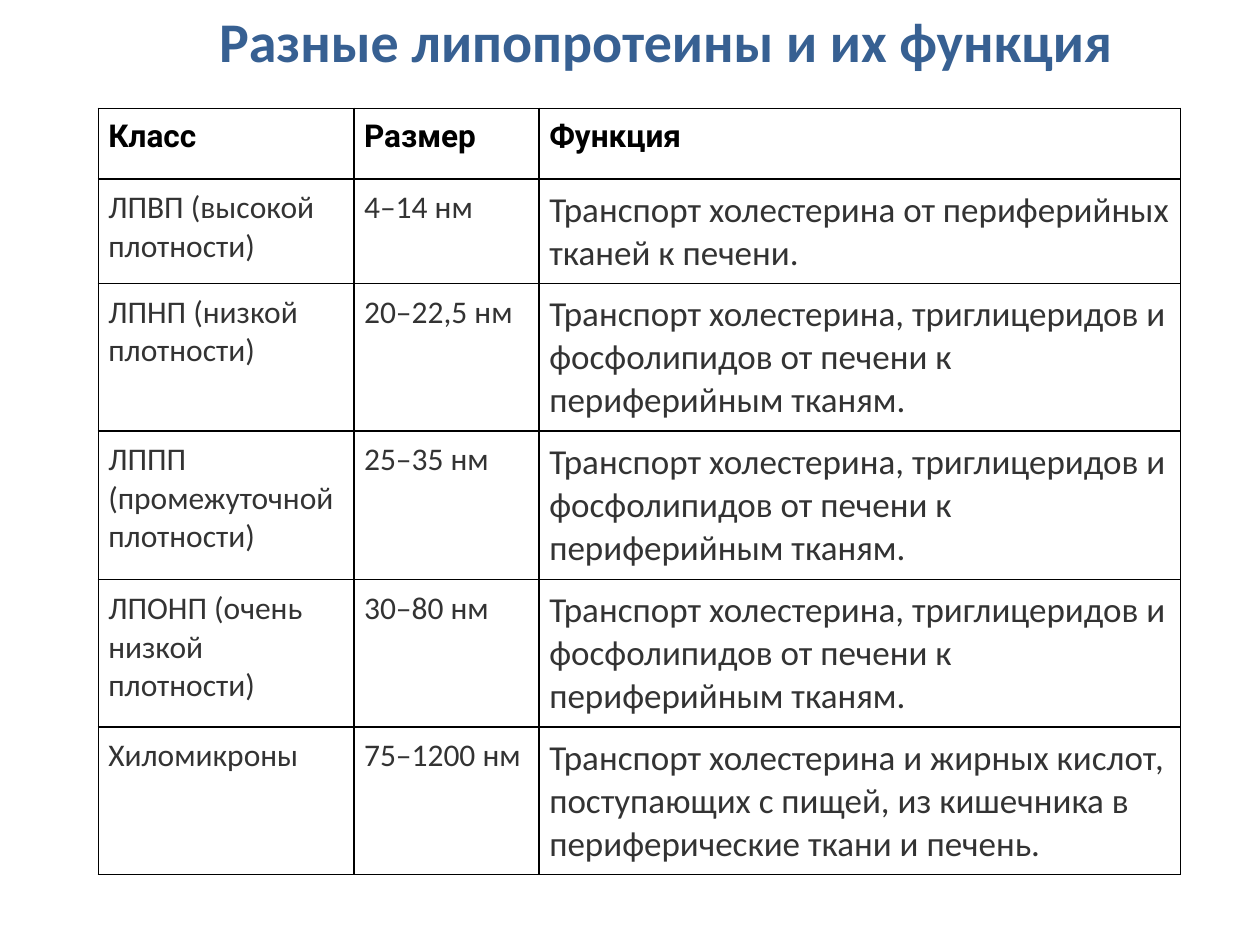
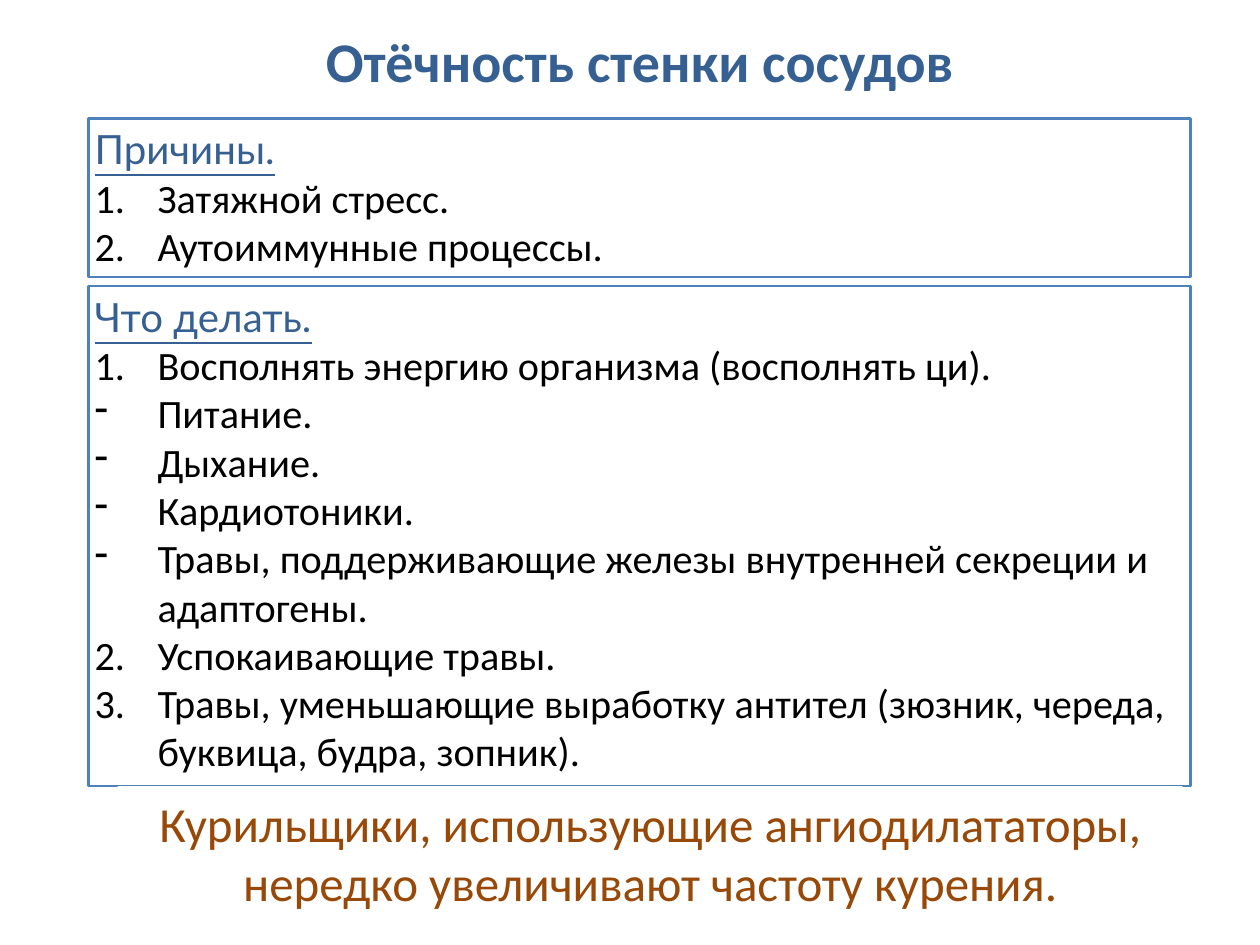
from dataclasses import dataclass

import pptx
import pptx.dml.color
import pptx.enum.shapes
import pptx.enum.text
import pptx.oxml.ns
import pptx.util
from lxml import etree

# Shared scale, colours and alignments
SCALE = 9144  # EMU in one px, 100 px to the inch
BLUE, BLACK, GREY = "376092", "000000", "333333"
EDGE, WHITE, BROWN = "4F81BD", "FFFFFF", "984807"
LEFT = pptx.enum.text.PP_ALIGN.LEFT
MID = pptx.enum.text.PP_ALIGN.CENTER


@dataclass(frozen=True)
class Area:
    left: int
    top: int
    width: int
    height: int

    def emu(self) -> list[int]:
        return [px(n) for n in (self.left, self.top, self.width, self.height)]


@dataclass(frozen=True)
class Style:
    size: int
    tint: str
    face: str = "Calibri"
    bold: bool = False
    under: bool = False


@dataclass(frozen=True)
class Line:
    text: str
    style: Style
    mark: str = ""  # "-" for a dash, "1" for a number
    start: int = 1
    align: int = LEFT


@dataclass(frozen=True)
class Panel:
    area: Area
    edge: str
    lines: list[Line]


TITLE = Style(32, BLUE, bold=True)
HEAD = Style(18, BLACK, "Roboto", bold=True)
SMALL = Style(18, GREY)
LARGE = Style(20, GREY)
TOPIC = Style(23, BLUE, "Lato", under=True)
ITEM = Style(23, BLACK)
NOTE = Style(28, BROWN)

# Table of lipoproteins
COLS = [203, 147, 509]
ROWS = [56, 83, 117, 118, 117, 117]
OUTWARD = "Транспорт холестерина, триглицеридов и фосфолипидов от печени к периферийным тканям."
DATA = [
    ("Класс", "Размер", "Функция"),
    ("ЛПВП (высокой плотности)", "4–14 нм",
     "Транспорт холестерина от периферийных тканей к печени."),
    ("ЛПНП (низкой плотности)", "20–22,5 нм", OUTWARD),
    ("ЛППП (промежуточной плотности)", "25–35 нм", OUTWARD),
    ("ЛПОНП (очень низкой плотности)", "30–80 нм", OUTWARD),
    ("Хиломикроны", "75–1200 нм",
     "Транспорт холестерина и жирных кислот, поступающих с пищей, "
     "из кишечника в периферические ткани и печень."),
]

# Panels on swelling of the vessel wall
PANELS = [
    Panel(Area(70, 94, 875, 126), EDGE, [
        Line("Причины.", TOPIC),
        Line("Затяжной стресс.", ITEM, "1"),
        Line("Аутоиммунные процессы.", ITEM, "1"),
    ]),
    Panel(Area(70, 227, 875, 397), EDGE, [
        Line("Что делать.", TOPIC),
        Line("Восполнять энергию организма (восполнять ци).", ITEM, "1"),
        Line("Питание.", ITEM, "-"),
        Line("Дыхание.", ITEM, "-"),
        Line("Кардиотоники.", ITEM, "-"),
        Line("Травы, поддерживающие железы внутренней секреции и адаптогены.", ITEM, "-"),
        Line("Успокаивающие травы.", ITEM, "1", 2),
        Line("Травы, уменьшающие выработку антител (зюзник, череда, буквица, будра, зопник).",
             ITEM, "1", 2),
    ]),
    Panel(Area(94, 625, 844, 104), WHITE, [
        Line("Курильщики, использующие ангиодилататоры, нередко увеличивают частоту курения.",
             NOTE, align=MID),
    ]),
]


def px(count: int) -> int:
    return pptx.util.Emu(count * SCALE)


def paint(code: str) -> pptx.dml.color.RGBColor:
    return pptx.dml.color.RGBColor.from_string(code)


def add_node(parent, tag: str, **attrs: str):
    return etree.SubElement(parent, pptx.oxml.ns.qn(tag), attrs)


def add_mark(para, line: Line) -> None:
    """Give a list line its hanging indent and its dash or number."""
    props = para._p.get_or_add_pPr()
    props.set("marL", str(px(50)))
    props.set("indent", str(px(-50)))
    if line.mark == "-":
        add_node(props, "a:buChar", char="-")
    else:
        add_node(props, "a:buAutoNum", type="arabicPeriod", startAt=str(line.start))


def write(frame, lines: list[Line]) -> None:
    frame.text = "\n".join(line.text for line in lines)
    for para, line in zip(frame.paragraphs, lines):
        para.alignment = line.align
        if line.mark:
            add_mark(para, line)
        font = para.runs[0].font
        font.name = line.style.face
        font.size = pptx.util.Pt(line.style.size)
        font.bold = line.style.bold
        font.underline = line.style.under
        font.color.rgb = paint(line.style.tint)


def add_title(slide, text: str, area: Area, align: int = LEFT, wrap: bool = True) -> None:
    frame = slide.shapes.add_textbox(*area.emu()).text_frame
    frame.word_wrap = wrap
    write(frame, [Line(text, TITLE, align=align)])


def pad(frame, size: int) -> None:
    frame.margin_left = frame.margin_right = px(size)
    frame.margin_top = frame.margin_bottom = px(size)


def add_panel(slide, panel: Panel) -> None:
    kind = pptx.enum.shapes.MSO_SHAPE.RECTANGLE
    shape = slide.shapes.add_shape(kind, *panel.area.emu())
    shape.shadow.inherit = False
    shape.fill.background()
    shape.line.color.rgb = paint(panel.edge)
    shape.line.width = pptx.util.Pt(1.5)
    frame = shape.text_frame
    frame.word_wrap = True
    frame.vertical_anchor = pptx.enum.text.MSO_ANCHOR.TOP
    pad(frame, 5)
    write(frame, panel.lines)


def add_edges(cell) -> None:
    """Draw a thin black line on each side of a cell."""
    props = cell._tc.get_or_add_tcPr()
    for spot, side in enumerate("LRTB"):
        edge = add_node(props, f"a:ln{side}", w=str(pptx.util.Pt(1)))
        fill = add_node(edge, "a:solidFill")
        add_node(fill, "a:srgbClr", val=BLACK)
        props.insert(spot, edge)


def add_grid(slide, left: int, top: int) -> None:
    area = Area(left, top, sum(COLS), sum(ROWS))
    table = slide.shapes.add_table(len(ROWS), len(COLS), *area.emu()).table
    table.first_row = table.horz_banding = False
    for col, width in zip(table.columns, COLS):
        col.width = px(width)
    for r, (row, height) in enumerate(zip(table.rows, ROWS)):
        row.height = px(height)
        for c, cell in enumerate(row.cells):
            style = HEAD if r == 0 else LARGE if c == 2 else SMALL
            cell.fill.background()
            add_edges(cell)
            pad(cell, 8)
            write(cell.text_frame, [Line(DATA[r][c], style)])


def main() -> None:
    deck = pptx.Presentation()
    deck.slide_width, deck.slide_height = px(1000), px(750)
    blank = deck.slide_layouts[6]

    # Slide 1: classes and functions
    slide = deck.slides.add_slide(blank)
    add_title(slide, "Разные липопротеины и их функция", Area(164, 0, 737, 64), wrap=False)
    add_grid(slide, 78, 86)

    # Slide 2: causes and remedies
    slide = deck.slides.add_slide(blank)
    add_title(slide, "Отёчность стенки сосудов", Area(94, 16, 828, 64), MID)
    for panel in PANELS:
        add_panel(slide, panel)

    deck.save("out.pptx")


if __name__ == "__main__":
    main()
